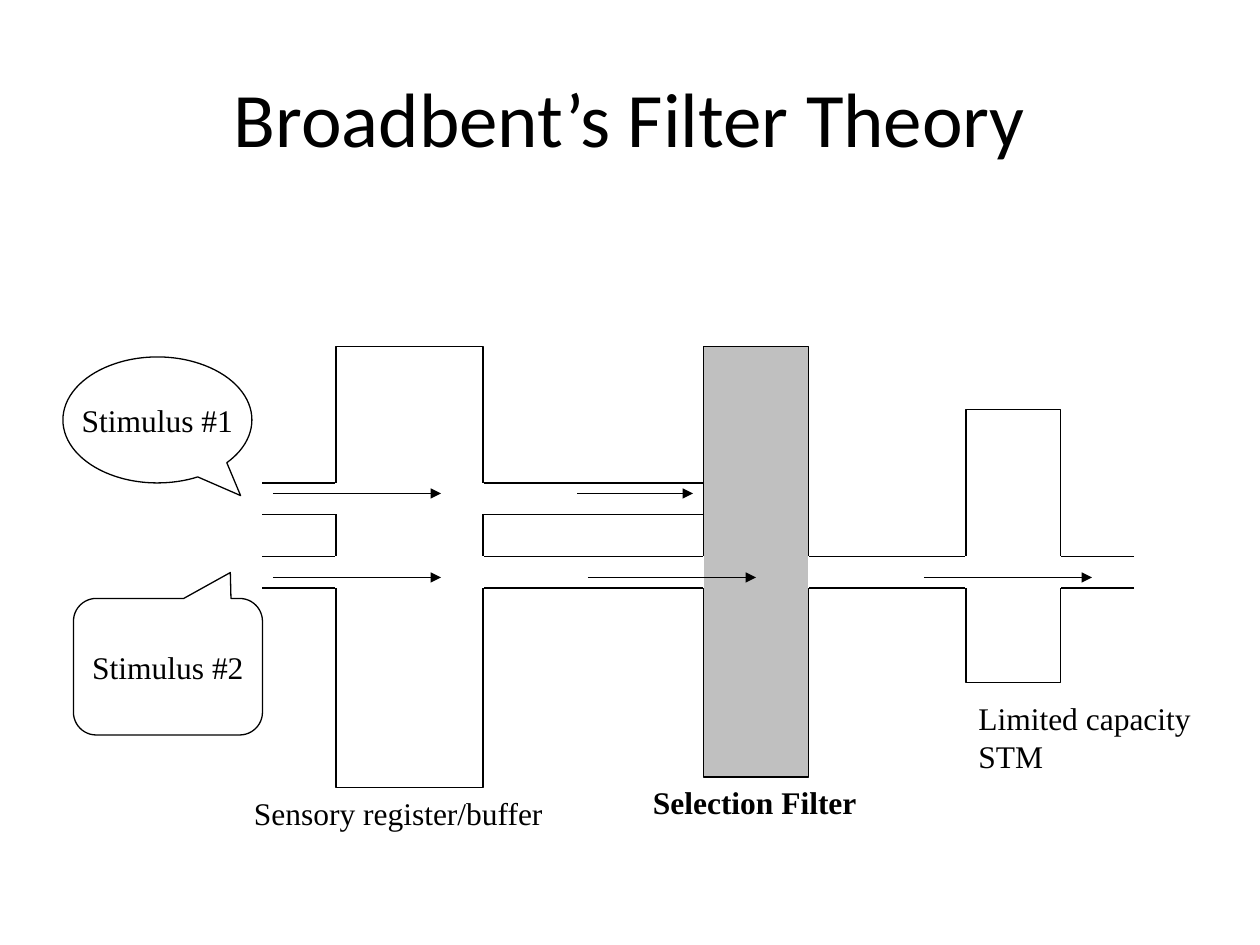
import pptx
import pptx.util
import pptx.dml.color
import pptx.enum.shapes
import pptx.enum.text
import pptx.oxml.ns
from lxml import etree

PX = 7620  # EMU per px, 120 px to the inch
COLORS = {"ink": "000000", "paper": "FFFFFF", "filter": "C0C0C0"}
BODY_FONT = "Times New Roman"
CHANNEL_HEIGHT = 30
SHAPE = pptx.enum.shapes.MSO_SHAPE
ALIGN = pptx.enum.text.PP_ALIGN
ANCHOR = pptx.enum.text.MSO_ANCHOR


def emu(*lengths):
    return [pptx.util.Emu(length * PX) for length in lengths]


def rgb(name):
    return pptx.dml.color.RGBColor.from_string(COLORS[name])


def write(frame, lines, size=18, font=BODY_FONT, bold=False, align=ALIGN.LEFT):
    for index, line in enumerate(lines):
        para = frame.paragraphs[0] if index == 0 else frame.add_paragraph()
        para.text = line
        para.alignment = align
        para.font.size = pptx.util.Pt(size)
        para.font.name = font
        para.font.bold = bold
        para.font.color.rgb = rgb("ink")


def add_text(page, box, lines, anchor=ANCHOR.TOP, **style):
    frame = page.shapes.add_textbox(*emu(*box)).text_frame
    frame.word_wrap = True
    frame.vertical_anchor = anchor
    write(frame, lines, **style)


def add_outlined(page, kind, box, fill="paper"):
    shape = page.shapes.add_shape(kind, *emu(*box))
    shape.shadow.inherit = False
    shape.fill.solid()
    shape.fill.fore_color.rgb = rgb(fill)
    shape.line.color.rgb = rgb("ink")
    shape.line.width = pptx.util.Pt(0.75)
    return shape


def add_line(page, start, end, color="ink", arrow=False):
    line = page.shapes.add_connector(
        pptx.enum.shapes.MSO_CONNECTOR.STRAIGHT, *emu(*start, *end))
    line.line.color.rgb = rgb(color)
    line.line.width = pptx.util.Pt(0.75)
    if arrow:
        etree.SubElement(line.line._get_or_add_ln(),
                         pptx.oxml.ns.qn("a:tailEnd"), type="triangle")
    etree.SubElement(line._element.spPr, pptx.oxml.ns.qn("a:effectLst"))


def add_channel(page, wall, outer, top):
    """Two rails from outer to a stage wall, with an opening in the wall."""
    bottom = top + CHANNEL_HEIGHT
    for y in (top, bottom):
        add_line(page, (outer, y), (wall, y))
    add_line(page, (wall, top), (wall, bottom), "paper")


def add_stimulus(page, kind, box, tip, label):
    """A callout whose tip is given as fractions of the box from its centre."""
    callout = add_outlined(page, kind, box)
    callout.adjustments[0], callout.adjustments[1] = tip
    frame = callout.text_frame
    frame.word_wrap = False
    frame.vertical_anchor = ANCHOR.MIDDLE
    write(frame, [label], align=ALIGN.CENTER)


def add_stage(page, box, fill, inlets, outlets, arrows):
    """Inlets and outlets are (top, length); arrows are (y, start, end)."""
    left, top, width, height = box
    right = left + width
    add_outlined(page, SHAPE.RECTANGLE, box, fill)
    for y, length in inlets:
        add_channel(page, left, left - length, top + y)
    for y, length in outlets:
        add_channel(page, right, right + length, top + y)
    for y, start, end in arrows:
        add_line(page, (left + start, top + y), (left + end, top + y), arrow=True)


def add_caption(page, stage_box, indent, gap, size, lines, bold=False):
    """Text below a stage, shifted sideways by indent."""
    left, top, width, height = stage_box
    add_text(page, (left + indent, top + height + gap, *size), lines, bold=bold)


def main():
    deck = pptx.Presentation()
    deck.slide_width, deck.slide_height = emu(1200, 900)
    page = deck.slides.add_slide(deck.slide_layouts[6])

    add_text(page, (60, 36, 1080, 150), ["Broadbent’s Filter Theory"],
             anchor=ANCHOR.MIDDLE, size=44, font="Calibri", align=ALIGN.CENTER)

    register = (320, 330, 140, 420)
    selection = (670, 330, 100, 410)
    memory = (920, 390, 90, 260)

    add_stage(page, register, "paper",
              inlets=[(130, 70), (200, 70)],
              outlets=[(130, 210), (200, 150)],
              arrows=[(140, -60, 100), (220, -60, 100)])
    add_stage(page, selection, "filter",
              inlets=[(200, 70)], outlets=[(200, 100)],
              arrows=[(140, -120, -10), (220, -110, 50)])
    add_stage(page, memory, "paper",
              inlets=[(140, 70)], outlets=[(140, 70)],
              arrows=[(160, -40, 120)])

    add_stimulus(page, SHAPE.OVAL_CALLOUT, (60, 340, 180, 120),
                 (0.44, 0.6), "Stimulus #1")
    add_stimulus(page, SHAPE.ROUNDED_RECTANGULAR_CALLOUT, (70, 570, 180, 130),
                 (0.33, -0.69), "Stimulus #2")

    add_caption(page, register, -90, 0, (330, 52), ["Sensory register/buffer"])
    add_caption(page, selection, -60, 0, (239, 52), ["Selection Filter"], bold=True)
    add_caption(page, memory, 0, 10, (248, 132), ["Limited capacity", "STM"])

    deck.save("out.pptx")


if __name__ == "__main__":
    main()
